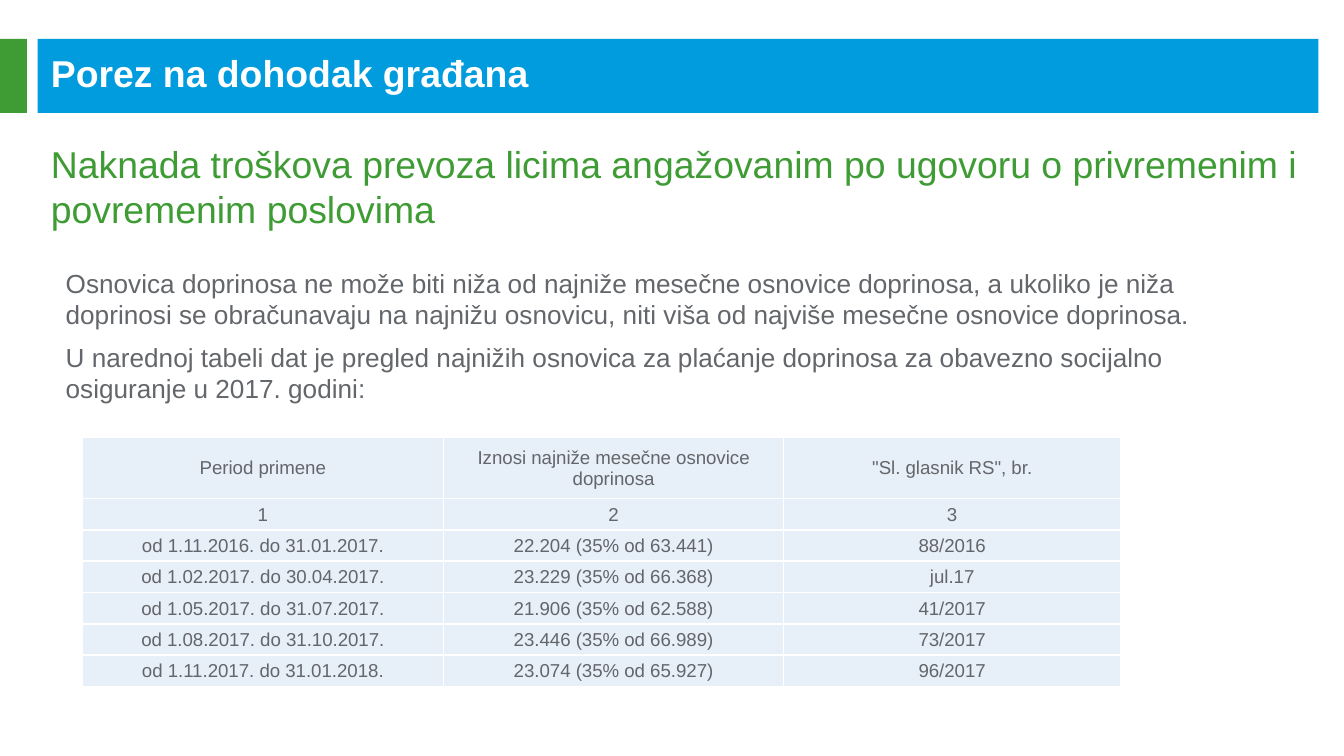
from lxml import etree
from pptx import Presentation
from pptx.dml.color import RGBColor
from pptx.enum import shapes, text
from pptx.oxml.ns import qn
from pptx.util import Inches, Pt

BLUE = RGBColor(0x00, 0x9C, 0xDE)
GREEN = RGBColor(0x3F, 0x9C, 0x35)
GREY = RGBColor(0x63, 0x66, 0x6A)
PALE_BLUE = RGBColor(0xE7, 0xEF, 0xF9)
WHITE = RGBColor(0xFF, 0xFF, 0xFF)

TITLE = "Porez na dohodak građana"
SUBTITLE = ("Naknada troškova prevoza licima angažovanim po ugovoru o "
            "privremenim i povremenim poslovima")
BODY = [
    "Osnovica doprinosa ne može biti niža od najniže mesečne osnovice doprinosa, "
    "a ukoliko je niža doprinosi se obračunavaju na najnižu osnovicu, "
    "niti viša od najviše mesečne osnovice doprinosa.",
    "U narednoj tabeli dat je pregled najnižih osnovica za plaćanje doprinosa "
    "za obavezno socijalno osiguranje u 2017. godini:",
]
ROWS = [
    ("Period primene", "Iznosi najniže mesečne osnovice doprinosa",
     '"Sl. glasnik RS", br.'),
    ("1", "2", "3"),
    ("od 1.11.2016. do 31.01.2017.", "22.204 (35% od 63.441)", "88/2016"),
    ("od 1.02.2017. do 30.04.2017.", "23.229 (35% od 66.368)", "jul.17"),
    ("od 1.05.2017. do 31.07.2017.", "21.906 (35% od 62.588)", "41/2017"),
    ("od 1.08.2017. do 31.10.2017.", "23.446 (35% od 66.989)", "73/2017"),
    ("od 1.11.2017. do 31.01.2018.", "23.074 (35% od 65.927)", "96/2017"),
]
COLUMN_WIDTHS = (2.69, 2.53, 2.51)
TABLE_HEIGHT = 1.86
HEADER_HEIGHT = 0.46


def add_bar(page, left, width, color):
    bar = page.shapes.add_shape(shapes.MSO_SHAPE.RECTANGLE, Inches(left),
                                Inches(0.29), Inches(width), Inches(0.55))
    bar.shadow.inherit = False
    bar.fill.solid()
    bar.fill.fore_color.rgb = color
    bar.line.fill.background()


def write_paragraph(para, wording, size, color, bold=False):
    span = para.add_run()
    span.text = wording
    look = {"name": "Arial", "size": Pt(size), "bold": bold}
    for key, value in look.items():
        setattr(span.font, key, value)
    span.font.color.rgb = color


def add_text(page, area, paragraphs, size, color, bold=False,
             anchor=text.MSO_ANCHOR.TOP, space_after=0):
    box = page.shapes.add_textbox(*map(Inches, area))
    frame = box.text_frame
    frame.word_wrap = True
    frame.vertical_anchor = anchor
    for index, wording in enumerate(paragraphs):
        para = frame.add_paragraph() if index else frame.paragraphs[0]
        para.space_after = Pt(space_after)
        write_paragraph(para, wording, size, color, bold)


def add_borders(cell):
    """Draw a one-point white line on every side, ahead of the cell's fill."""
    properties = cell._tc.get_or_add_tcPr()
    for position, side in enumerate(("lnL", "lnR", "lnT", "lnB")):
        line = etree.Element(qn(f"a:{side}"), w=str(Pt(1)))
        fill = etree.SubElement(line, qn("a:solidFill"))
        etree.SubElement(fill, qn("a:srgbClr"), val=str(WHITE))
        properties.insert(position, line)


def fill_cell(cell, wording):
    layout = {"margin_left": Inches(0.01), "margin_right": Inches(0.01),
              "margin_top": Inches(0.01), "margin_bottom": 0,
              "vertical_anchor": text.MSO_ANCHOR.MIDDLE}
    for key, value in layout.items():
        setattr(cell, key, value)
    cell.fill.solid()
    cell.fill.fore_color.rgb = PALE_BLUE
    add_borders(cell)
    para = cell.text_frame.paragraphs[0]
    para.alignment = text.PP_ALIGN.CENTER
    write_paragraph(para, wording, 10, GREY)


def add_rates_table(page):
    frame = page.shapes.add_table(len(ROWS), len(COLUMN_WIDTHS), Inches(0.61),
                                  Inches(3.25), Inches(sum(COLUMN_WIDTHS)),
                                  Inches(TABLE_HEIGHT))
    table = frame.table
    table.first_row = table.horz_banding = False
    for column, width in zip(table.columns, COLUMN_WIDTHS):
        column.width = Inches(width)
    row_height = (TABLE_HEIGHT - HEADER_HEIGHT) / (len(ROWS) - 1)
    for index, (row, wordings) in enumerate(zip(table.rows, ROWS)):
        row.height = Inches(row_height if index else HEADER_HEIGHT)
        for cell, wording in zip(row.cells, wordings):
            fill_cell(cell, wording)


def main():
    deck = Presentation()
    deck.slide_width = Inches(10)
    deck.slide_height = deck.slide_width * 9 // 16
    page = deck.slides.add_slide(deck.slide_layouts[6])

    add_bar(page, 0.28, 9.53, BLUE)
    add_bar(page, 0, 0.2, GREEN)
    add_text(page, (0.28, 0.39, 9.45, 0.3), [TITLE], 20, WHITE, bold=True,
             anchor=text.MSO_ANCHOR.MIDDLE)
    add_text(page, (0.28, 1, 9.53, 0.71), [SUBTITLE], 20, GREEN)
    add_text(page, (0.39, 1.94, 9.15, 1.77), BODY, 14, GREY, space_after=6)
    add_rates_table(page)

    deck.save("out.pptx")


if __name__ == "__main__":
    main()
